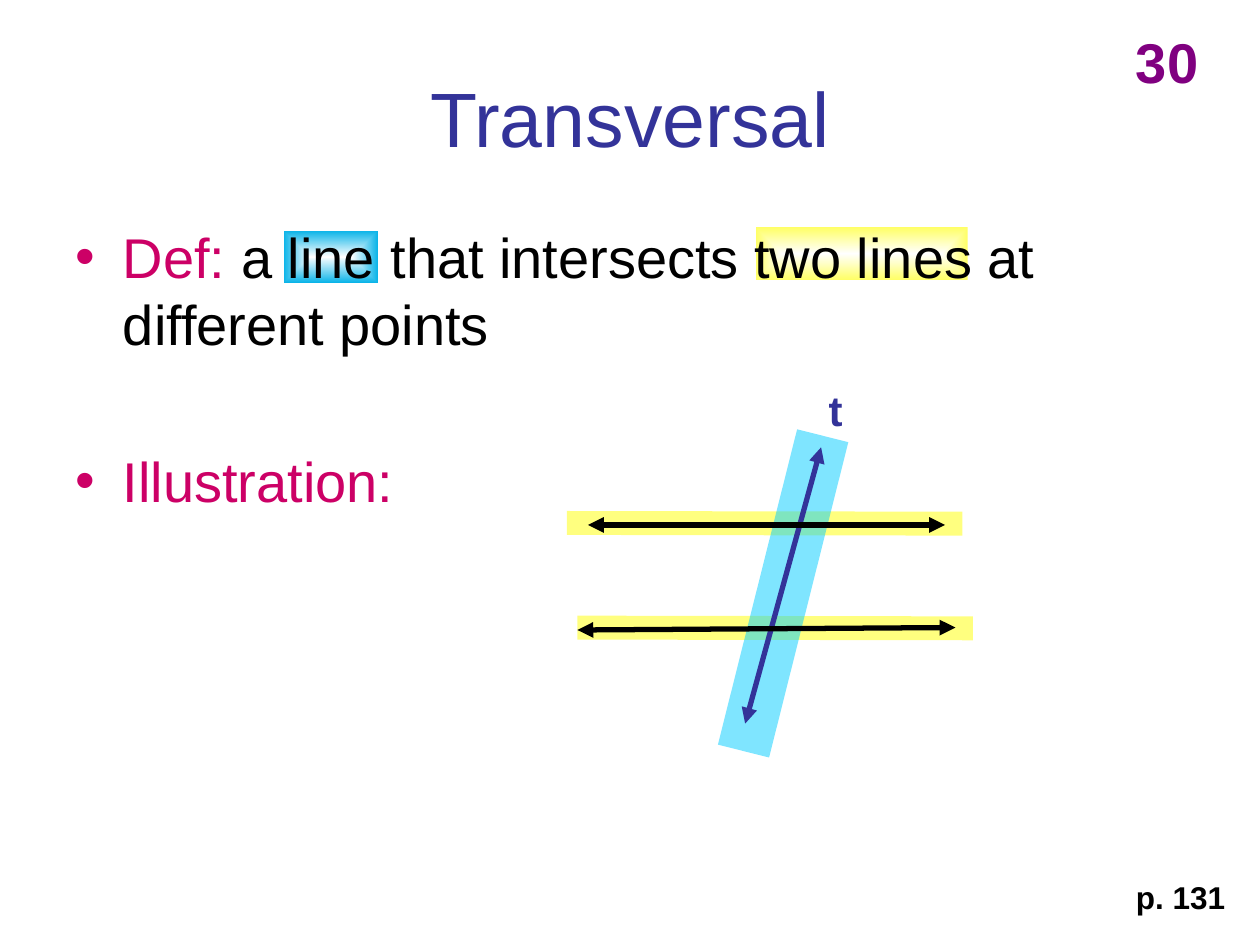
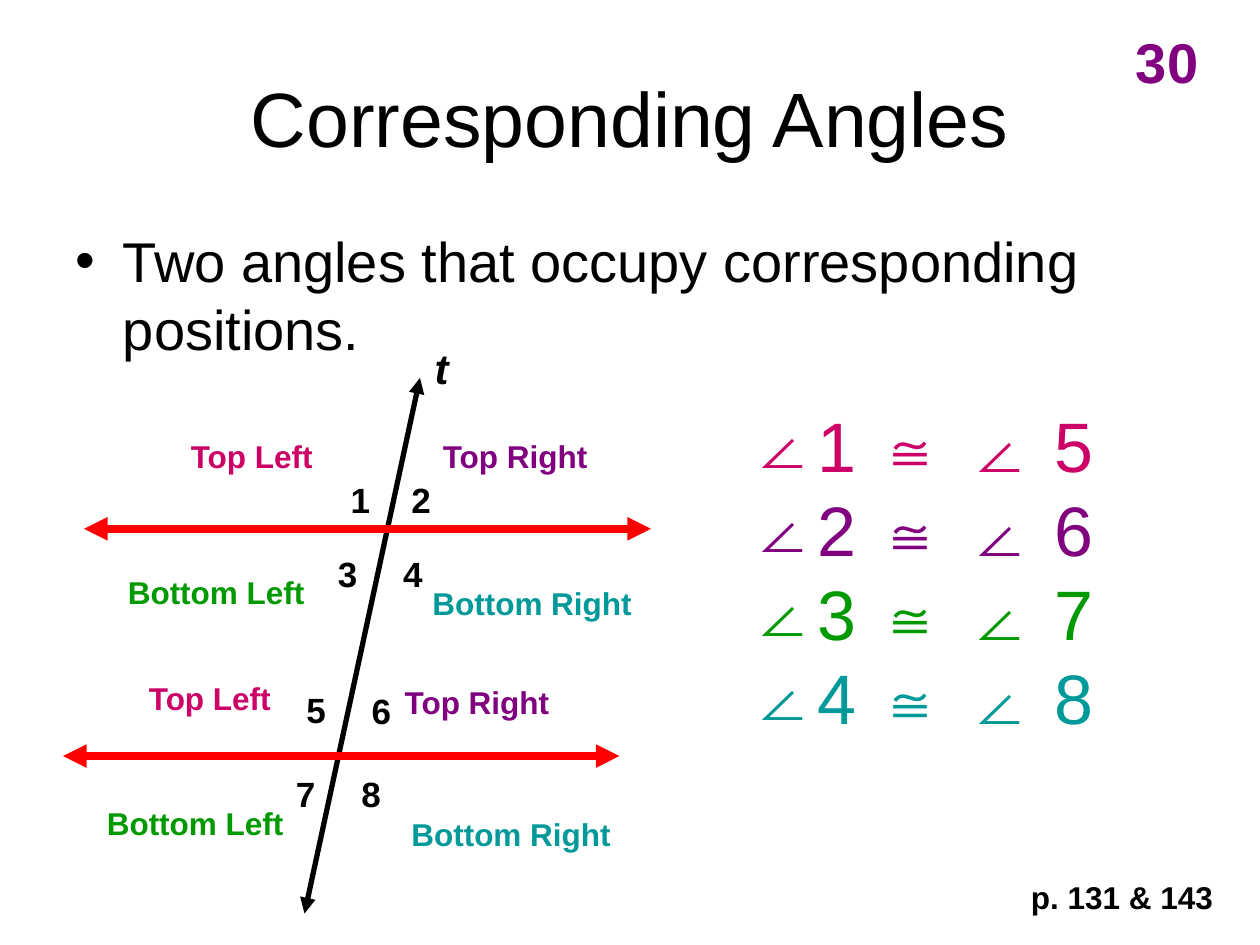
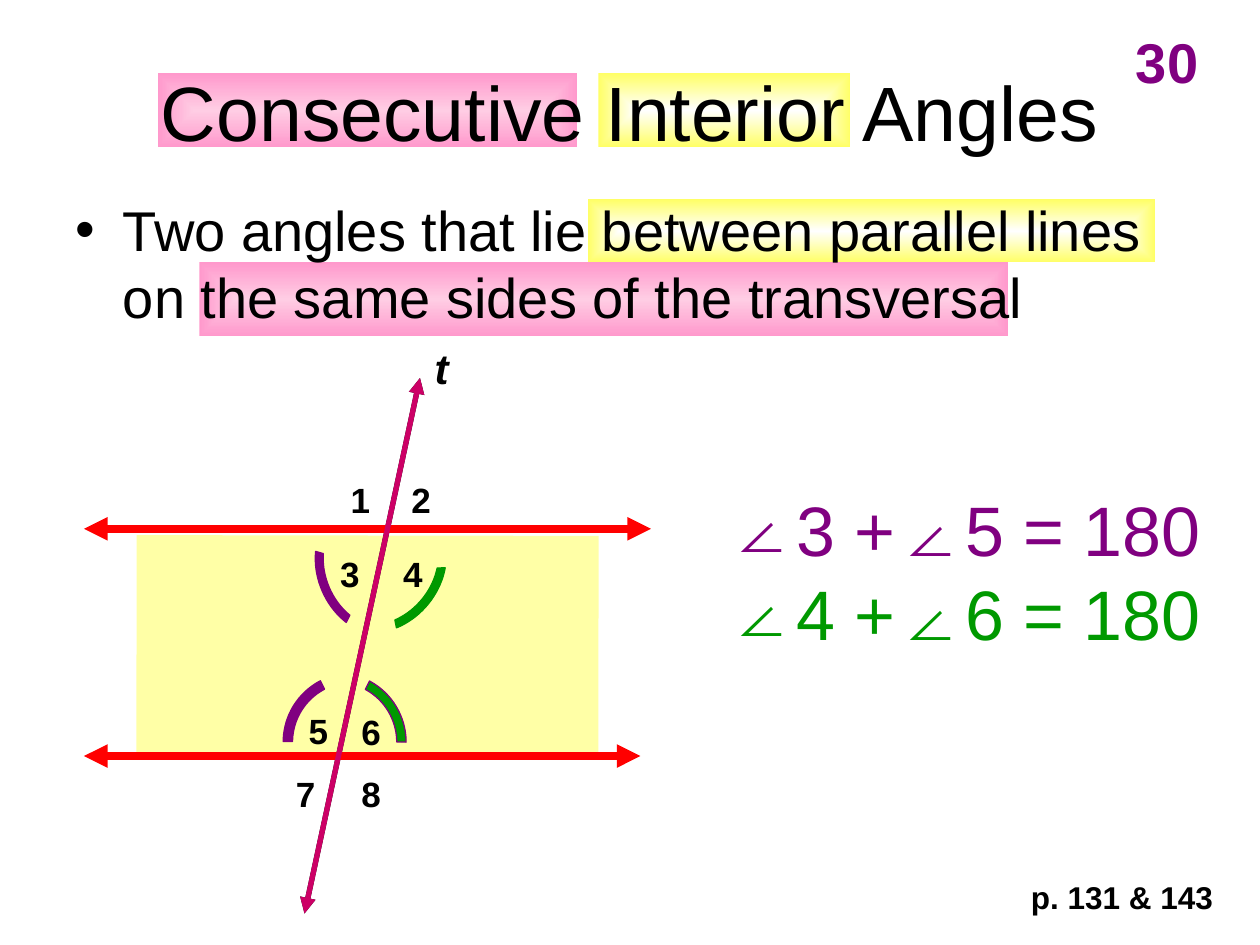
from lxml import etree
from pptx import Presentation
from pptx import util as u
from pptx.dml.color import RGBColor
from pptx.enum import shapes, text
from pptx.oxml.ns import qn

Pt = u.Pt
FONT = "Arial"
BLACK = RGBColor(0x00, 0x00, 0x00)
WHITE = RGBColor(0xFF, 0xFF, 0xFF)
RED = RGBColor(0xFF, 0x00, 0x00)
INDIGO = RGBColor(0x33, 0x33, 0x99)
MAGENTA = RGBColor(0xCC, 0x00, 0x66)
PURPLE = RGBColor(0x80, 0x00, 0x80)
GREEN = RGBColor(0x00, 0x99, 0x00)
TEAL = RGBColor(0x00, 0x99, 0x99)
YELLOW = RGBColor(0xFF, 0xFF, 0x00)
SOFT_YELLOW = RGBColor(0xFF, 0xFF, 0x66)
BAND_YELLOW = RGBColor(0xFF, 0xFF, 0x4F)
CYAN = RGBColor(0x00, 0xCC, 0xFF)
BLUE = RGBColor(0x08, 0xB3, 0xE8)
PINK = RGBColor(0xFF, 0x99, 0xCC)
PALE_PINK = RGBColor(0xFF, 0xCD, 0xE4)


def add_text(slide, box, lines, size, bold=True, italic=False, bullet=None,
             wrap=True, top_inset=3.6):
    shape = slide.shapes.add_textbox(*[Pt(value) for value in box])
    frame = shape.text_frame
    frame.word_wrap = wrap
    frame.margin_top = Pt(top_inset)
    for index, (words, color) in enumerate(lines):
        paragraph = frame.add_paragraph() if index else frame.paragraphs[0]
        if bullet:
            properties = paragraph._p.get_or_add_pPr()
            etree.SubElement(properties, qn("a:buFont"), typeface=FONT)
            etree.SubElement(properties, qn("a:buChar"), char=bullet)
        run = paragraph.add_run()
        run.text = words
        run.font.name = FONT
        run.font.size = Pt(size)
        run.font.bold = bold
        run.font.italic = italic
        run.font.color.rgb = color


def add_arrow(slide, ends, color, width):
    connector = slide.shapes.add_connector(
        shapes.MSO_CONNECTOR.STRAIGHT, *[Pt(value) for value in ends])
    connector.line.color.rgb = color
    connector.line.width = Pt(width)
    line = connector.line._get_or_add_ln()
    for end in ("a:headEnd", "a:tailEnd"):
        etree.SubElement(line, qn(end), type="triangle")
    etree.SubElement(connector._element.spPr, qn("a:effectLst"))


presentation = Presentation()
presentation.slide_width = Pt(720)
presentation.slide_height = Pt(540)

pages = [
    {"title": ("Transversal", INDIGO, 21.6),
     "body_top": 123.6,
     "body": [[("Def:", MAGENTA),
               (" a line that intersects two lines at different points", BLACK)],
              [("Illustration:", MAGENTA)]],
     "reference": ("p. 131", 642, 65.5),
     "highlights": [(432, 130, 121, 30, 0, WHITE, SOFT_YELLOW),
                    (324, 292.2, 226, 13.7, 0.1, None, YELLOW),
                    (330, 352, 226, 13.7, 0.1, None, YELLOW),
                    (162, 131.8, 54, 30, 0, WHITE, BLUE),
                    (354.6, 324, 185.8, 30.2, 284.1, None, CYAN)]},
    {"title": ("Corresponding Angles", BLACK, 21.6),
     "body_top": 126,
     "body": [[("Two angles that occupy corresponding positions.", BLACK)]],
     "reference": ("p. 131 & 143", 582, 118.8),
     "highlights": []},
    {"title": ("Consecutive Interior Angles", BLACK, 18),
     "body_top": 108,
     "body": [[("Two angles that lie between parallel lines on the same "
                "sides of the transversal", BLACK)]],
     "reference": ("p. 131 & 143", 582, 118.8),
     "highlights": [(114, 150, 462, 42, 0, PALE_PINK, PINK),
                    (90, 42, 240, 42, 0, PALE_PINK, PINK),
                    (78, 306, 264, 126, 0.1, None, BAND_YELLOW),
                    (342, 42, 144, 42, 0, WHITE, SOFT_YELLOW),
                    (336, 114, 324, 36, 0, WHITE, SOFT_YELLOW)]},
]

for page in pages:
    slide = presentation.slides.add_slide(presentation.slide_layouts[1])
    for left, top, width, height, rotation, center, edge in page["highlights"]:
        shape = slide.shapes.add_shape(shapes.MSO_SHAPE.RECTANGLE,
                                       Pt(left), Pt(top), Pt(width), Pt(height))
        shape.shadow.inherit = False
        shape.line.fill.background()
        shape.rotation = rotation
        if center is None:
            shape.fill.solid()
            shape.fill.fore_color.rgb = edge
            color = shape._element.spPr.find(".//" + qn("a:srgbClr"))
            etree.SubElement(color, qn("a:alpha"), val="50000")
        else:
            shape.fill.gradient()
            for stop, color in zip(shape.fill.gradient_stops, (center, edge)):
                stop.color.rgb = color
            gradient = shape._element.spPr.find(qn("a:gradFill"))
            gradient.remove(gradient.find(qn("a:lin")))
            outline = etree.SubElement(gradient, qn("a:path"), path="shape")
            etree.SubElement(outline, qn("a:fillToRect"),
                             l="50000", t="50000", r="50000", b="50000")

    words, color, title_top = page["title"]
    title, body = slide.placeholders
    for shape, top, height in ((title, title_top, 90),
                               (body, page["body_top"], 356.4)):
        shape.left, shape.top = Pt(36), Pt(top)
        shape.width, shape.height = Pt(648), Pt(height)
        slide.shapes._spTree.append(shape._element)

    content = [(title, 44, [[(words, color)]]), (body, 32, page["body"])]
    for shape, size, paragraphs in content:
        for index, runs in enumerate(paragraphs):
            frame = shape.text_frame
            paragraph = frame.add_paragraph() if index else frame.paragraphs[0]
            paragraph.space_before = Pt(51 if index else 0)
            for words, color in runs:
                run = paragraph.add_run()
                run.text = words
                run.font.name = FONT
                run.font.size = Pt(size)
                run.font.color.rgb = color
    title.text_frame.vertical_anchor = text.MSO_ANCHOR.MIDDLE
    title.text_frame.paragraphs[0].alignment = text.PP_ALIGN.CENTER

    words, left, width = page["reference"]
    add_text(slide, (left, 498, width, 28.8), [(words, BLACK)], 18, wrap=False)
    add_text(slide, (642, 12, 60, 45.4), [("30", PURPLE)], 32)

definition, corresponding, consecutive = presentation.slides

add_arrow(definition, (469.2, 255.6, 425.8, 413.5), INDIGO, 3)
add_arrow(definition, (330, 360, 546, 358.6), BLACK, 3)
add_arrow(definition, (336, 300, 540, 300), BLACK, 3)
add_text(definition, (466.4, 216, 22.3, 36), [("t", INDIGO)], 24, wrap=False)

TRANSVERSAL = (240, 216, 174, 522)
diagrams = [
    (corresponding, (36, 354),
     {3: (186, 312), 5: (168, 390), 6: (205.2, 390.2)}),
    (consecutive, (48, 366),
     {3: (187.2, 312), 5: (169.2, 402), 6: (199.4, 402.5)}),
]
shared_angles = {1: (193.2, 270), 2: (228, 270), 4: (223.2, 312),
                 7: (162, 438), 8: (199.4, 438)}
for slide, (start, end), own_angles in diagrams:
    add_arrow(slide, TRANSVERSAL, BLACK, 3)
    add_arrow(slide, (48, 302.2, 372, 302.2), RED, 4.5)
    add_arrow(slide, (start, 432, end, 432), RED, 4.5)
    add_text(slide, (241.2, 192, 22.3, 36), [("t", BLACK)], 24, italic=True,
             wrap=False)
    for number, (left, top) in (shared_angles | own_angles).items():
        add_text(slide, (left, top, 46.8, 47.5), [(str(number), BLACK)], 20)

positions = [
    ("Top Left", MAGENTA, 111.6, [(102, 246), (78, 384.2)]),
    ("Top Right", PURPLE, 111.6, [(246, 246), (224.2, 386.6)]),
    ("Bottom Right", TEAL, 138.2, [(240, 330.2), (228, 462)]),
    ("Bottom Left", GREEN, 118.1, [(66, 324), (54, 456)]),
]
for words, color, width, places in positions:
    for left, top in places:
        add_text(corresponding, (left, top, width, 59.8), [(words, color)], 18)

pairs = [(f"{number} ≅ ∠ {number + 4}", color) for number, color
         in enumerate((MAGENTA, PURPLE, GREEN, TEAL), 1)]
add_text(corresponding, (420, 226.4, 246, 247), pairs, 40, False, bullet="∠")
sums = [("3 +∠5 = 180", PURPLE), ("4 +∠6 = 180", GREEN)]
add_text(consecutive, (408, 226.4, 288, 247), sums, 40, False, bullet="∠",
         top_inset=51.6)

add_arrow(consecutive, TRANSVERSAL, MAGENTA, 3)

ARC_THICKNESS = 0.07
DEGREE = 0.6
angle_arcs = [
    ((174.2, 292.3, 79.2, 64.8), 246.7, 39.4, PURPLE, PURPLE),
    ((154.8, 385.2, 77.8, 76.3), 59.1, 32, GREEN, PURPLE),
    ((180, 292.3, 79.2, 64.8), 129.1, 39.4, GREEN, GREEN),
    ((161.3, 385.2, 77.8, 76.3), 301.5, 32, PURPLE, PURPLE),
]
for box, rotation, half_sweep, fill, line in angle_arcs:
    shape = consecutive.shapes.add_shape(shapes.MSO_SHAPE.BLOCK_ARC,
                                         *[Pt(value) for value in box])
    shape.adjustments[0] = (270 - half_sweep) * DEGREE
    shape.adjustments[1] = (270 + half_sweep) * DEGREE
    shape.adjustments[2] = ARC_THICKNESS
    shape.rotation = rotation
    shape.shadow.inherit = False
    shape.fill.solid()
    shape.fill.fore_color.rgb = fill
    shape.line.color.rgb = line
    shape.line.width = Pt(0.75)

presentation.save("out.pptx")
